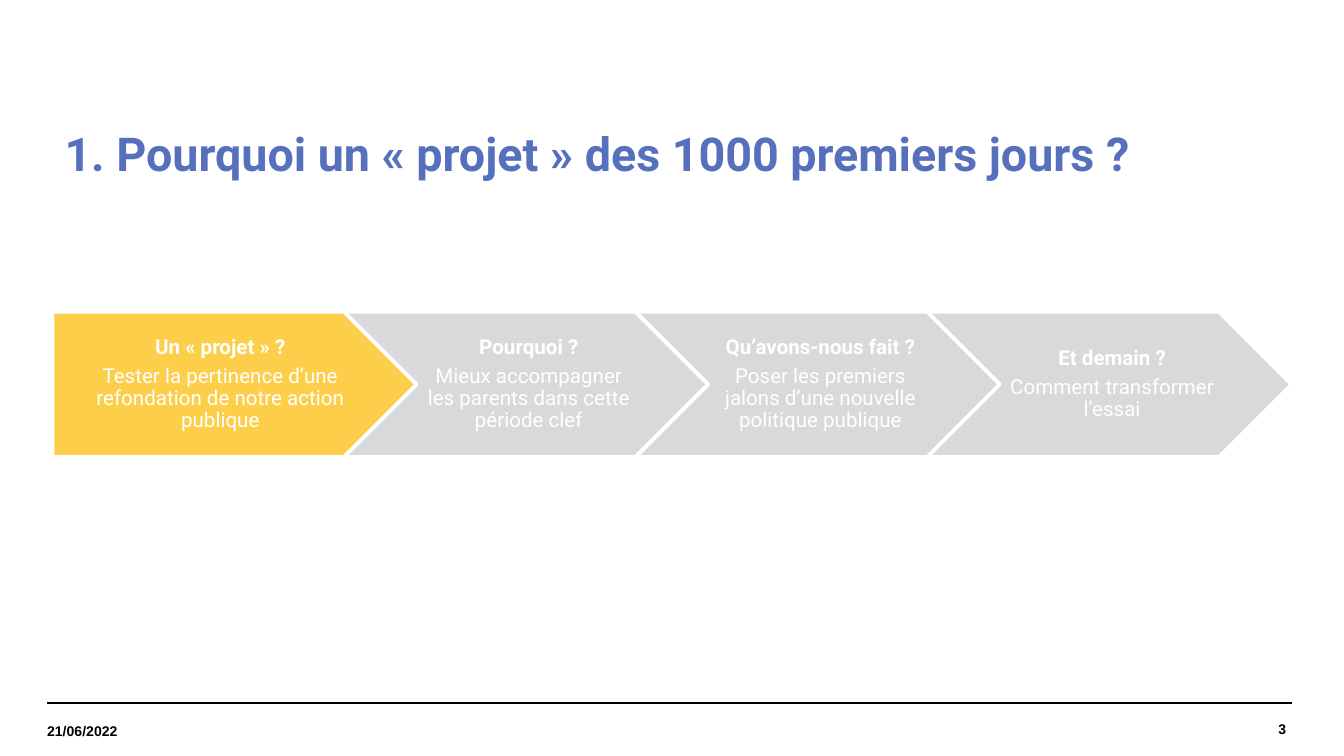
from lxml import etree
from pptx import Presentation
from pptx.dml.color import RGBColor
from pptx.enum.shapes import MSO_CONNECTOR, MSO_SHAPE
from pptx.enum.text import MSO_ANCHOR, PP_ALIGN
from pptx.oxml.ns import qn
from pptx.util import Inches, Pt

BLACK = RGBColor(0x00, 0x00, 0x00)
WHITE = RGBColor(0xFF, 0xFF, 0xFF)
BLUE = RGBColor(0x57, 0x70, 0xBE)
YELLOW = RGBColor(0xFC, 0xCE, 0x4A)
GREY = RGBColor(0xD9, 0xD9, 0xD9)
LEFT, CENTER, RIGHT = PP_ALIGN.LEFT, PP_ALIGN.CENTER, PP_ALIGN.RIGHT
MIDDLE = MSO_ANCHOR.MIDDLE
PENTAGON, CHEVRON = MSO_SHAPE.PENTAGON, MSO_SHAPE.CHEVRON
STRAIGHT = MSO_CONNECTOR.STRAIGHT

STEP_LEFT, STEP_TOP, STEP_PITCH = 0.39, 2.32, 2.17
STEP_W, STEP_H = 2.71, 1.08
STEPS = [
    ("Un « projet » ?", "Tester la pertinence d’une refondation de notre action publique"),
    ("Pourquoi ?", "Mieux accompagner les parents dans cette période clef"),
    ("Qu’avons-nous fait ?", "Poser les premiers jalons d’une nouvelle politique publique"),
    ("Et demain ?", "Comment transformer l’essai"),
]


class SlideBuilder:
    heading_font = "Roboto"
    footer_font = "Arial"

    def __init__(self, slide):
        self.s = slide

    def rule(self, x1, x2, y):
        ln = self.s.shapes.add_connector(
            STRAIGHT, Inches(x1), Inches(y), Inches(x2), Inches(y))
        ln.line.color.rgb = BLACK
        ln.line.width = Pt(0.8)
        etree.SubElement(ln._element.spPr, qn("a:effectLst"))

    def text(self, box, lines, font, size, color, align=LEFT,
             insets=(0, 0, 0, 0), spacing=1.0, after=0):
        tb = self.s.shapes.add_textbox(*map(Inches, box))
        tf = tb.text_frame
        tf.word_wrap = True
        tf.vertical_anchor = MIDDLE
        (tf.margin_left, tf.margin_top,
         tf.margin_right, tf.margin_bottom) = map(Inches, insets)
        for i, (line, bold) in enumerate(lines):
            p = tf.add_paragraph() if i else tf.paragraphs[0]
            p.alignment = align
            p.line_spacing = spacing
            p.space_after = Pt(after)
            r = p.add_run()
            r.text = line
            r.font.name = font
            r.font.size = Pt(size)
            r.font.bold = bold
            r.font.color.rgb = color

    def title(self, text):
        self.text((0.36, 0.86, 9.21, 0.59), [(text, True)], self.heading_font,
                  25, BLUE, insets=(0.12, 0.07, 0.1, 0.05), spacing=0.9)

    def footer(self, box, text, align):
        self.text(box, [(text, True)], self.footer_font, 7.5, BLACK, align)

    def arrow(self, kind, x, fill):
        sp = self.s.shapes.add_shape(
            kind, Inches(x), Inches(STEP_TOP), Inches(STEP_W), Inches(STEP_H))
        sp.shadow.inherit = False
        sp.fill.solid()
        sp.fill.fore_color.rgb = fill
        sp.line.color.rgb = WHITE
        sp.line.width = Pt(2)

    def step(self, index, heading, detail):
        x = STEP_LEFT + index * STEP_PITCH
        if index == 0:
            self.arrow(PENTAGON, x, YELLOW)
            text_x, text_w, pad = x + 0.01, 2.44, 0.06
        else:
            self.arrow(CHEVRON, x, GREY)
            text_x, text_w, pad = x + 0.55, 1.62, 0.05
        self.text((text_x, STEP_TOP, text_w, STEP_H),
                  [(heading, True), (detail, False)], self.heading_font, 11,
                  WHITE, CENTER, (pad, 0.03, 0.02, 0.03), 0.9, 3.85)


def main():
    prs = Presentation()
    prs.slide_width = Inches(10)
    prs.slide_height = prs.slide_width * 9 // 16
    b = SlideBuilder(prs.slides.add_slide(prs.slide_layouts[6]))
    for x in (0.35, 0.39):
        b.rule(x, x + 9.22, 5.23)
    b.footer((8.09, 5.23, 1.48, 0.39), "3", RIGHT)
    b.footer((0.35, 5.25, 1.28, 0.38), "21/06/2022", LEFT)
    b.title("1. Pourquoi un « projet » des 1000 premiers jours ?")
    for i, (heading, detail) in enumerate(STEPS):
        b.step(i, heading, detail)
    prs.save("out.pptx")


if __name__ == "__main__":
    main()
